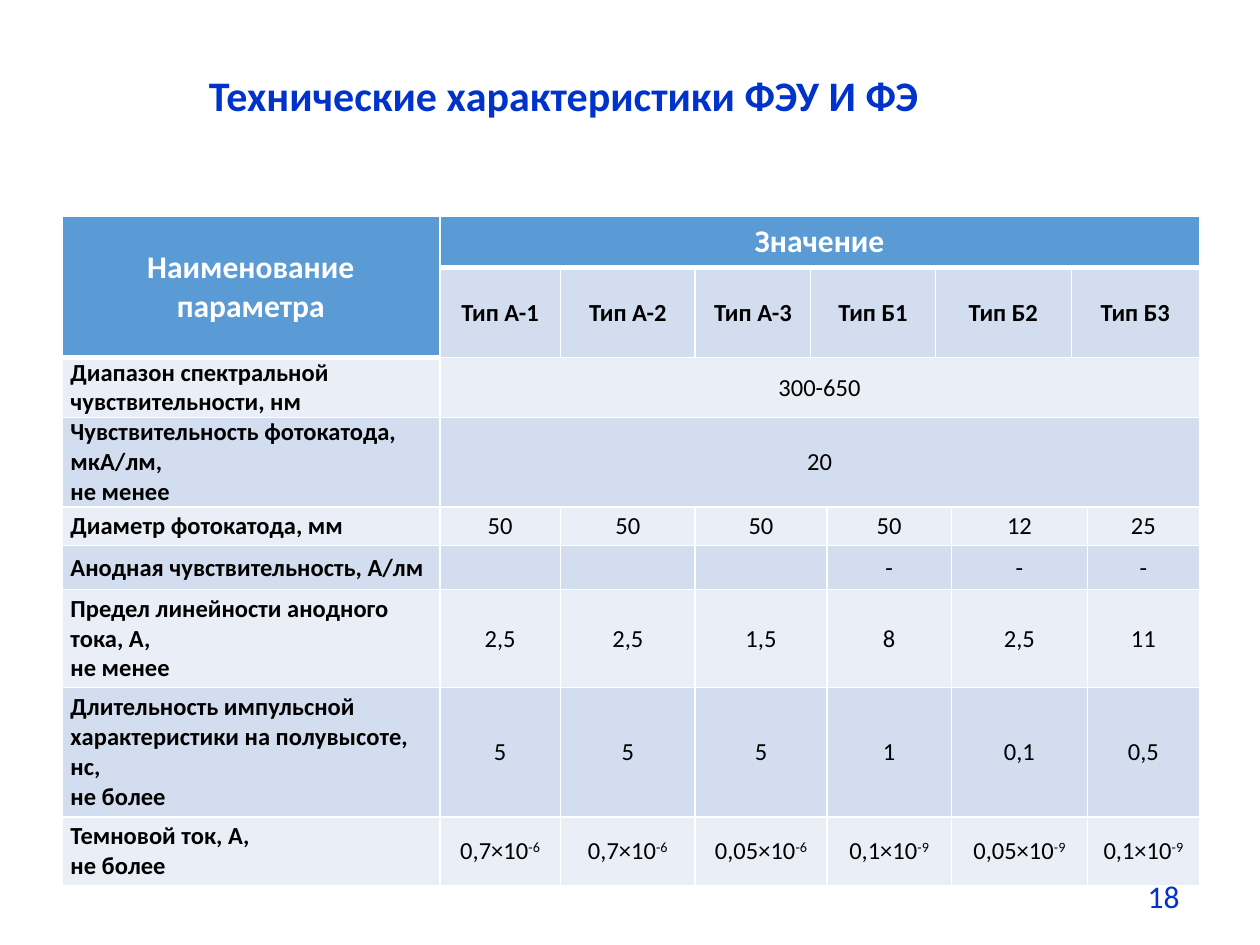
from dataclasses import dataclass

from lxml import etree
from pptx import Presentation
from pptx import util as u
from pptx.dml.color import RGBColor
from pptx.enum import text
from pptx.oxml import ns

WHITE = RGBColor(0xFF, 0xFF, 0xFF)
BLACK = RGBColor(0, 0, 0)
BLUE = RGBColor(0x00, 0x33, 0xCC)
HEADER_FILL = RGBColor(0x5B, 0x9B, 0xD5)
DARK_BAND = RGBColor(0xD2, 0xDE, 0xEF)
LIGHT_BAND = RGBColor(0xEA, 0xEF, 0xF7)

FONT = "Calibri"
COLUMN_WIDTHS = [216, 69, 77, 66, 9.2, 62.1, 9.2, 68.5, 9.2, 64]
ROW_HEIGHTS = [28.8, 51.4, 34.2, 51.2, 22, 25.2, 56, 73.8, 39.4]

# Column where each value starts, with the number of columns it covers
TYPE_SPANS = [(1, 1), (2, 1), (3, 1), (4, 2), (6, 2), (8, 2)]
VALUE_SPANS = [(1, 1), (2, 1), (3, 2), (5, 2), (7, 2), (9, 1)]
FULL_SPAN = [(1, 9)]

TYPES = ["Тип А-1", "Тип А-2", "Тип А-3", "Тип Б1", "Тип Б2", "Тип Б3"]


@dataclass
class Label:
    content: str
    left: float
    top: float
    width: float
    height: float
    size: float
    bold: bool
    wrap: bool


@dataclass
class Parameter:
    name: str
    values: list[str]


@dataclass
class CellStyle:
    fill: RGBColor
    color: RGBColor = BLACK
    size: float = 14
    bold: bool = True
    centered: bool = True
    inset_x: float = 7.2
    inset_y: float = 3.6


LABELS = [
    Label("18", 648.7, 497.5, 38.9, 33.8, 18, False, True),
    Label("Технические характеристики ФЭУ И ФЭ", 112.3, 36, 424.1, 36, 24, True, False),
]

# "^" marks the start of an exponent, a line break starts a paragraph
PARAMETERS = [
    Parameter("Диапазон спектральной чувствительности, нм", ["300-650"]),
    Parameter("Чувствительность фотокатода, мкА/лм,\nне менее", ["20"]),
    Parameter("Диаметр фотокатода, мм", ["50", "50", "50", "50", "12", "25"]),
    Parameter("Анодная чувствительность, А/лм", ["", "", "", "-", "-", "-"]),
    Parameter("Предел линейности анодного тока, А,\nне менее",
              ["2,5", "2,5", "1,5", "8", "2,5", "11"]),
    Parameter("Длительность импульсной характеристики на полувысоте, нс,\nне более",
              ["5", "5", "5", "1", "0,1", "0,5"]),
    Parameter("Темновой ток, А,\nне более",
              ["0,7×10^-6", "0,7×10^-6", "0,05×10^-6",
               "0,1×10^-9", "0,05×10^-9", "0,1×10^-9"]),
]


def apply_format(target, values: dict) -> None:
    for name, value in values.items():
        setattr(target, name, value)


def add_run(paragraph, content: str, size: float, bold: bool, color: RGBColor):
    run = paragraph.add_run()
    run.text = content
    apply_format(run.font, {"name": FONT, "size": u.Pt(size), "bold": bold})
    run.font.color.rgb = color
    return run


def add_label(slide, label: Label) -> None:
    shape = slide.shapes.add_textbox(
        *map(u.Pt, (label.left, label.top, label.width, label.height)))
    shape.text_frame.word_wrap = label.wrap
    if not label.wrap:
        shape.text_frame.auto_size = text.MSO_AUTO_SIZE.SHAPE_TO_FIT_TEXT
    add_run(shape.text_frame.paragraphs[0], label.content, label.size, label.bold, BLUE)


def add_borders(cell, top: float, bottom: float) -> None:
    properties = cell._tc.get_or_add_tcPr()
    for side, width in {"L": 1, "R": 1, "T": top, "B": bottom}.items():
        line = etree.SubElement(properties, ns.qn(f"a:ln{side}"), w=str(u.Pt(width)))
        fill = etree.SubElement(line, ns.qn("a:solidFill"))
        etree.SubElement(fill, ns.qn("a:srgbClr"), val=str(WHITE))


def fill_cell(cell, content: str, style: CellStyle) -> None:
    cell.fill.solid()
    cell.fill.fore_color.rgb = style.fill
    apply_format(cell, {
        "vertical_anchor": text.MSO_ANCHOR.MIDDLE,
        "margin_left": u.Pt(style.inset_x), "margin_right": u.Pt(style.inset_x),
        "margin_top": u.Pt(style.inset_y), "margin_bottom": u.Pt(style.inset_y),
    })
    if not content:
        return
    for index, line in enumerate(content.split("\n")):
        frame = cell.text_frame
        paragraph = frame.add_paragraph() if index else frame.paragraphs[0]
        paragraph.alignment = text.PP_ALIGN.CENTER if style.centered else text.PP_ALIGN.LEFT
        base, _, exponent = line.partition("^")
        add_run(paragraph, base, style.size, style.bold, style.color)
        if exponent:
            run = add_run(paragraph, exponent, style.size, style.bold, style.color)
            run.font._element.set("baseline", "30000")


def fill_row(table, row: int, spans: list, contents: list[str], style: CellStyle) -> None:
    for (column, count), content in zip(spans, contents):
        cell = table.cell(row, column)
        if count > 1:
            cell.merge(table.cell(row, column + count - 1))
        fill_cell(cell, content, style)


def add_parameter_table(slide) -> None:
    frame = slide.shapes.add_table(
        len(ROW_HEIGHTS), len(COLUMN_WIDTHS), u.Pt(35.3), u.Pt(123.8),
        u.Pt(sum(COLUMN_WIDTHS)), u.Pt(sum(ROW_HEIGHTS)))
    table = frame.table
    apply_format(table, {"first_row": False, "horz_banding": False})
    for column, width in zip(table.columns, COLUMN_WIDTHS):
        column.width = u.Pt(width)
    for row, height in zip(table.rows, ROW_HEIGHTS):
        row.height = u.Pt(height)

    # White grid with a thick line below the header cells
    for row in range(len(ROW_HEIGHTS)):
        for column in range(len(COLUMN_WIDTHS)):
            header_end = 0 if column else 1
            add_borders(table.cell(row, column),
                        top=3 if row == header_end + 1 else 1,
                        bottom=3 if row == header_end else 1)

    # Header
    header = CellStyle(HEADER_FILL, WHITE, 18)
    table.cell(0, 0).merge(table.cell(1, 0))
    fill_cell(table.cell(0, 0), "Наименование параметра", header)
    fill_row(table, 0, FULL_SPAN, ["Значение"], header)
    fill_row(table, 1, TYPE_SPANS, TYPES, CellStyle(DARK_BAND))

    # Parameters in alternating bands
    for row, parameter in enumerate(PARAMETERS, start=2):
        band = DARK_BAND if row % 2 else LIGHT_BAND
        insets = {"inset_x": 5, "inset_y": 0}
        fill_cell(table.cell(row, 0), parameter.name,
                  CellStyle(band, centered=False, **insets))
        spans = FULL_SPAN if len(parameter.values) == 1 else VALUE_SPANS
        fill_row(table, row, spans, parameter.values,
                 CellStyle(band, bold=False, **insets))


def main() -> None:
    presentation = Presentation()
    apply_format(presentation, {"slide_width": u.Pt(720), "slide_height": u.Pt(540)})
    slide = presentation.slides.add_slide(presentation.slide_layouts[6])
    add_parameter_table(slide)
    for label in LABELS:
        add_label(slide, label)
    presentation.save("out.pptx")


if __name__ == "__main__":
    main()
